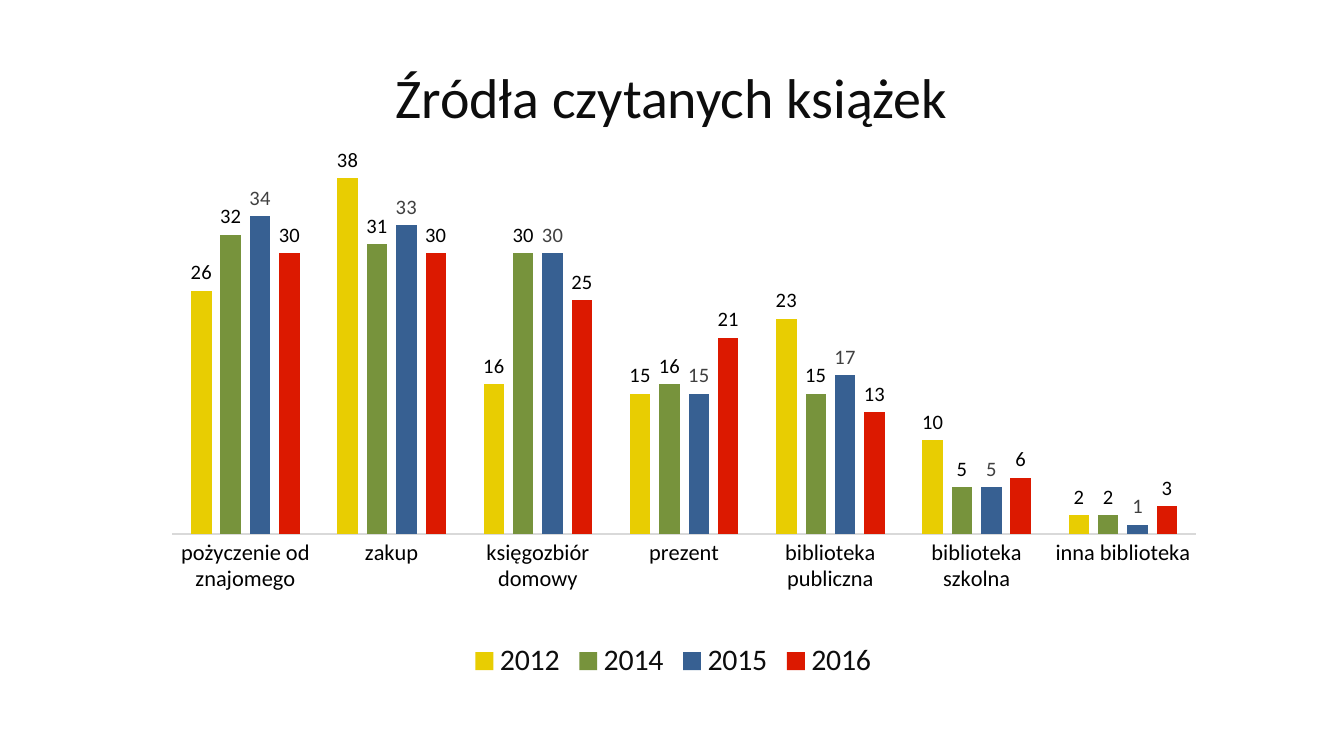
"""Build a slide with a clustered column chart of where readers get their books."""
from dataclasses import dataclass

from lxml import etree
from pptx import Presentation
from pptx.chart.data import CategoryChartData
from pptx.dml.color import RGBColor
from pptx.enum.chart import XL_CHART_TYPE as ChartType, XL_LABEL_POSITION as LabelPosition
from pptx.enum.chart import XL_LEGEND_POSITION as LegendPosition, XL_TICK_MARK as TickMark
from pptx.enum.chart import XL_TICK_LABEL_POSITION as TickLabels
from pptx.enum.text import MSO_ANCHOR as Anchor, PP_ALIGN as Align
from pptx.oxml.ns import qn
from pptx.util import Pt


@dataclass(frozen=True)
class Theme:
    font: str = "Calibri"
    heading: str = "0D0D0D"
    text: str = "000000"
    muted: str = "404040"
    axis: str = "D9D9D9"
    yellow: str = "E8CD02"
    green: str = "77933C"
    blue: str = "376092"
    red: str = "DC1900"
    title_size: int = 30
    legend_size: int = 16
    category_size: int = 12
    label_size: int = 11
    chart_size: int = 10


theme = Theme()


def set_font(font, size, color):
    font.name = theme.font
    font.size = Pt(size)
    font.bold = False
    font.color.rgb = RGBColor.from_string(color)


categories = [
    "pożyczenie od znajomego", "zakup", "księgozbiór domowy", "prezent",
    "biblioteka publiczna", "biblioteka szkolna", "inna biblioteka",
]
years = [
    ("2012", (26, 38, 16, 15, 23, 10, 2), theme.yellow, theme.text),
    ("2014", (32, 31, 30, 16, 15, 5, 2), theme.green, theme.text),
    ("2015", (34, 33, 30, 15, 17, 5, 1), theme.blue, theme.muted),
    ("2016", (30, 30, 25, 21, 13, 6, 3), theme.red, theme.text),
]

deck = Presentation()
deck.slide_width, deck.slide_height = Pt(720), Pt(405)
page = deck.slides.add_slide(deck.slide_layouts[5])

title = page.shapes.title
title.left, title.top, title.width, title.height = Pt(203), Pt(29.5), Pt(313.5), Pt(44)
frame = title.text_frame
frame.word_wrap = False
frame.vertical_anchor = Anchor.MIDDLE
para = frame.paragraphs[0]
para.alignment = Align.CENTER
span = para.add_run()
span.text = "Źródła czytanych książek"
set_font(span.font, theme.title_size, theme.heading)

data = CategoryChartData(number_format="General")
data.categories = categories
for year, values, fill, label_color in years:
    data.add_series(year, values)
chart = page.shapes.add_chart(
    ChartType.COLUMN_CLUSTERED, Pt(67.7), Pt(72.7), Pt(586), Pt(294.5), data
).chart
chart.has_title = False
set_font(chart.font, theme.chart_size, theme.text)

chart.has_legend = True
chart.legend.position = LegendPosition.BOTTOM
chart.legend.include_in_layout = False
set_font(chart.legend.font, theme.legend_size, theme.heading)

category_axis = chart.category_axis
category_axis.major_tick_mark = TickMark.NONE
category_axis.format.line.color.rgb = RGBColor.from_string(theme.axis)
category_axis.format.line.width = Pt(0.75)
set_font(category_axis.tick_labels.font, theme.category_size, theme.text)

value_axis = chart.value_axis
value_axis.minimum_scale, value_axis.maximum_scale = 0, 40
value_axis.has_major_gridlines = False
value_axis.major_tick_mark = TickMark.NONE
value_axis.tick_label_position = TickLabels.NONE
value_axis.format.line.fill.background()

plot = chart.plots[0]
plot.gap_width, plot.overlap = 185, -44
plot.vary_by_categories = False
for series, (year, values, fill, label_color) in zip(plot.series, years):
    series.invert_if_negative = False
    series.format.fill.solid()
    series.format.fill.fore_color.rgb = RGBColor.from_string(fill)
    labels = series.data_labels
    labels.show_value = True
    labels.position = LabelPosition.OUTSIDE_END
    set_font(labels.font, theme.label_size, label_color)

plot_area = chart.element.find(".//" + qn("c:plotArea"))
for layout in plot_area.findall(qn("c:layout")):
    plot_area.remove(layout)
layout = etree.Element(qn("c:layout"))
manual = etree.SubElement(layout, qn("c:manualLayout"))
for name, setting in [
    ("layoutTarget", "inner"), ("xMode", "edge"), ("yMode", "edge"),
    ("x", "0.042"), ("y", "0.044"), ("w", "0.936"), ("h", "0.681"),
]:
    etree.SubElement(manual, qn("c:" + name)).set("val", setting)
plot_area.insert(0, layout)

deck.save("out.pptx")
